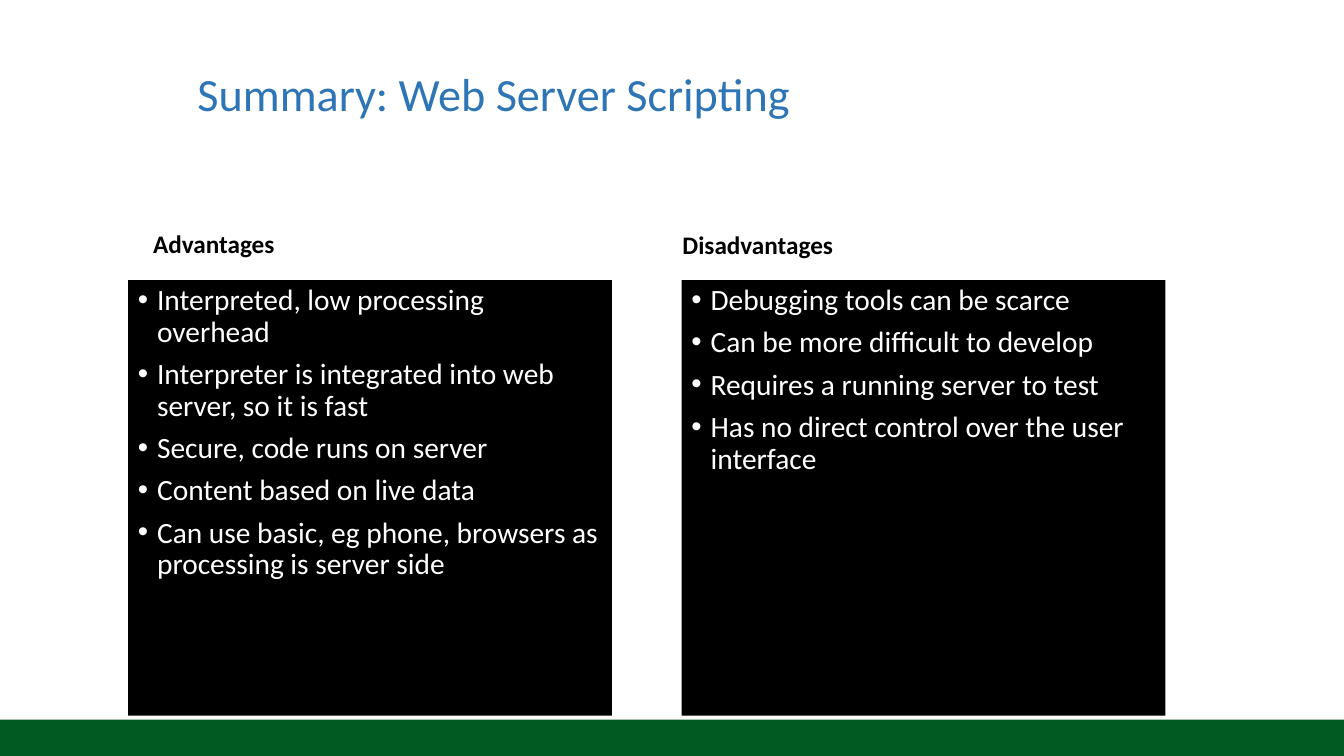
from dataclasses import dataclass

from lxml.etree import SubElement
from pptx import Presentation
from pptx.dml.color import RGBColor
from pptx.enum.shapes import MSO_SHAPE as Shape
from pptx.enum.text import MSO_ANCHOR as Anchor, PP_ALIGN as Align
from pptx.oxml.ns import qn
from pptx.util import Inches, Pt


@dataclass(frozen=True)
class Theme:
    font: str = "Calibri"
    title_color: str = "2E75B6"
    heading_color: str = "000000"
    panel_color: str = "000000"
    item_color: str = "FFFFFF"
    footer_color: str = "015A22"
    title_size: int = 33
    heading_size: int = 18
    item_size: int = 21


theme = Theme()


def add_block(left, top, width, height, fill=None):
    area = [Inches(value) for value in (left, top, width, height)]
    if fill is None:
        return slide.shapes.add_textbox(*area)
    block = slide.shapes.add_shape(Shape.RECTANGLE, *area)
    block.shadow.inherit = False
    block.fill.solid()
    block.fill.fore_color.rgb = RGBColor.from_string(fill)
    block.line.fill.background()
    return block


def write(block, lines, size, color, anchor, bold=False, bullets=False):
    frame = block.text_frame
    frame.word_wrap = True
    frame.vertical_anchor = anchor
    for index, line in enumerate(lines):
        paragraph = frame.paragraphs[0] if index == 0 else frame.add_paragraph()
        paragraph.alignment = Align.LEFT
        paragraph.line_spacing = 0.9
        if index:
            paragraph.space_before = Pt(7.5)
        if bullets:
            properties = paragraph._p.get_or_add_pPr()
            properties.set("marL", str(Inches(0.19)))
            properties.set("indent", str(Inches(-0.19)))
            SubElement(properties, qn("a:buFont"), typeface="Arial")
            SubElement(properties, qn("a:buChar"), char="•")
        run = paragraph.add_run()
        run.text = line
        run.font.name = theme.font
        run.font.size = Pt(size)
        run.font.bold = bold
        run.font.color.rgb = RGBColor.from_string(color)


deck = Presentation()
deck.slide_width = Inches(13.33)
deck.slide_height = Inches(7.5)
slide = deck.slides.add_slide(deck.slide_layouts[6])

add_block(0, 7.14, 13.33, 0.36, theme.footer_color)

title = add_block(1.86, 0.33, 9.61, 1.25)
write(title, ["Summary: Web Server Scripting"], theme.title_size, theme.title_color, Anchor.MIDDLE)

columns = [
    ("Advantages", 1.42, 1.86, 1.27, [
        "Interpreted, low processing overhead",
        "Interpreter is integrated into web server, so it is fast",
        "Secure, code runs on server",
        "Content based on live data",
        "Can use basic, eg phone, browsers as processing is server side",
    ]),
    ("Disadvantages", 6.67, 1.87, 6.76, [
        "Debugging tools can be scarce",
        "Can be more difficult to develop",
        "Requires a running server to test",
        "Has no direct control over the user interface",
    ]),
]

for label, heading_left, heading_top, panel_left, points in columns:
    heading = add_block(heading_left, heading_top, 4.89, 0.76)
    write(heading, [label], theme.heading_size, theme.heading_color, Anchor.BOTTOM, bold=True)
    panel = add_block(panel_left, 2.78, 4.8, 4.32, theme.panel_color)
    write(panel, points, theme.item_size, theme.item_color, Anchor.TOP, bullets=True)

deck.save("out.pptx")
